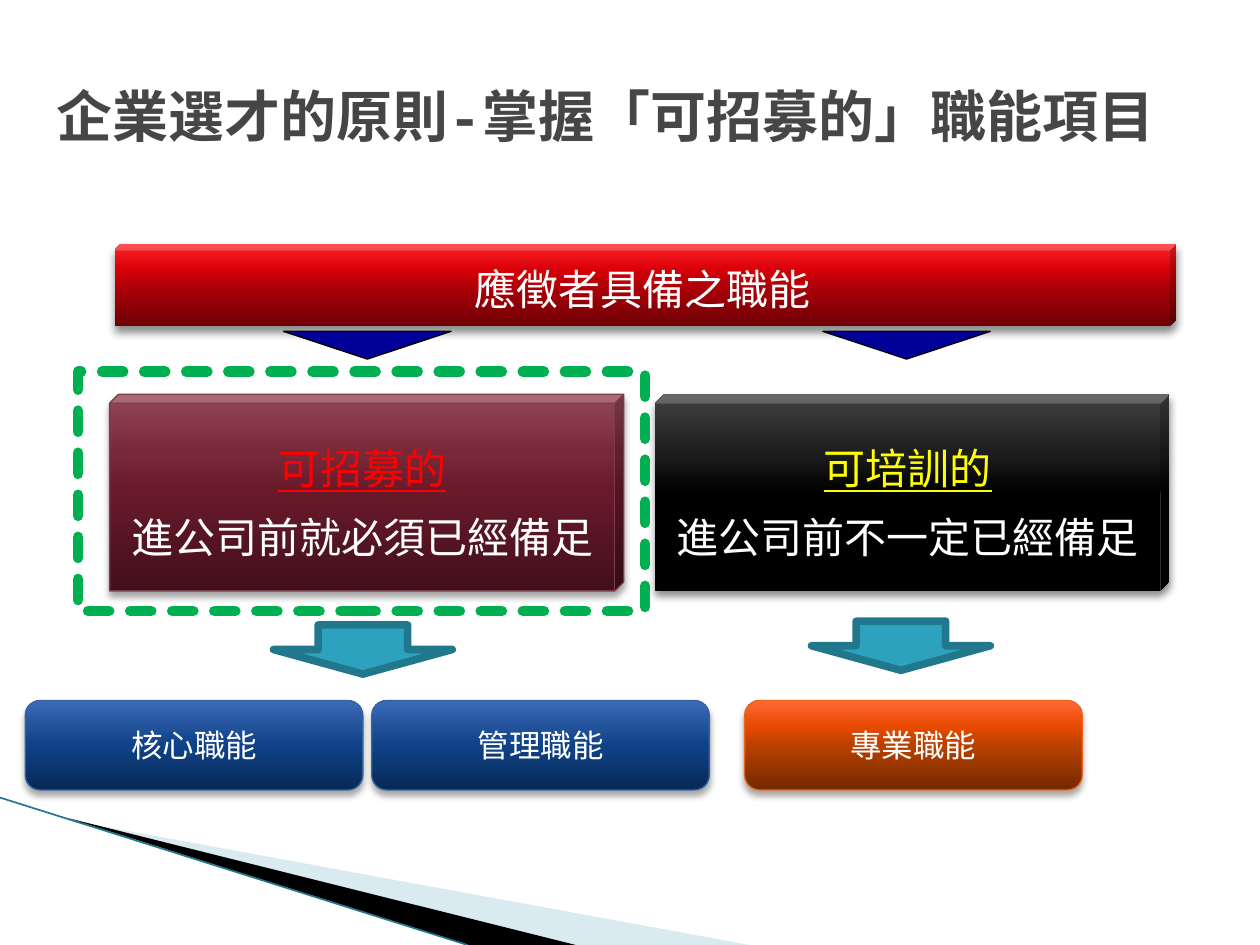
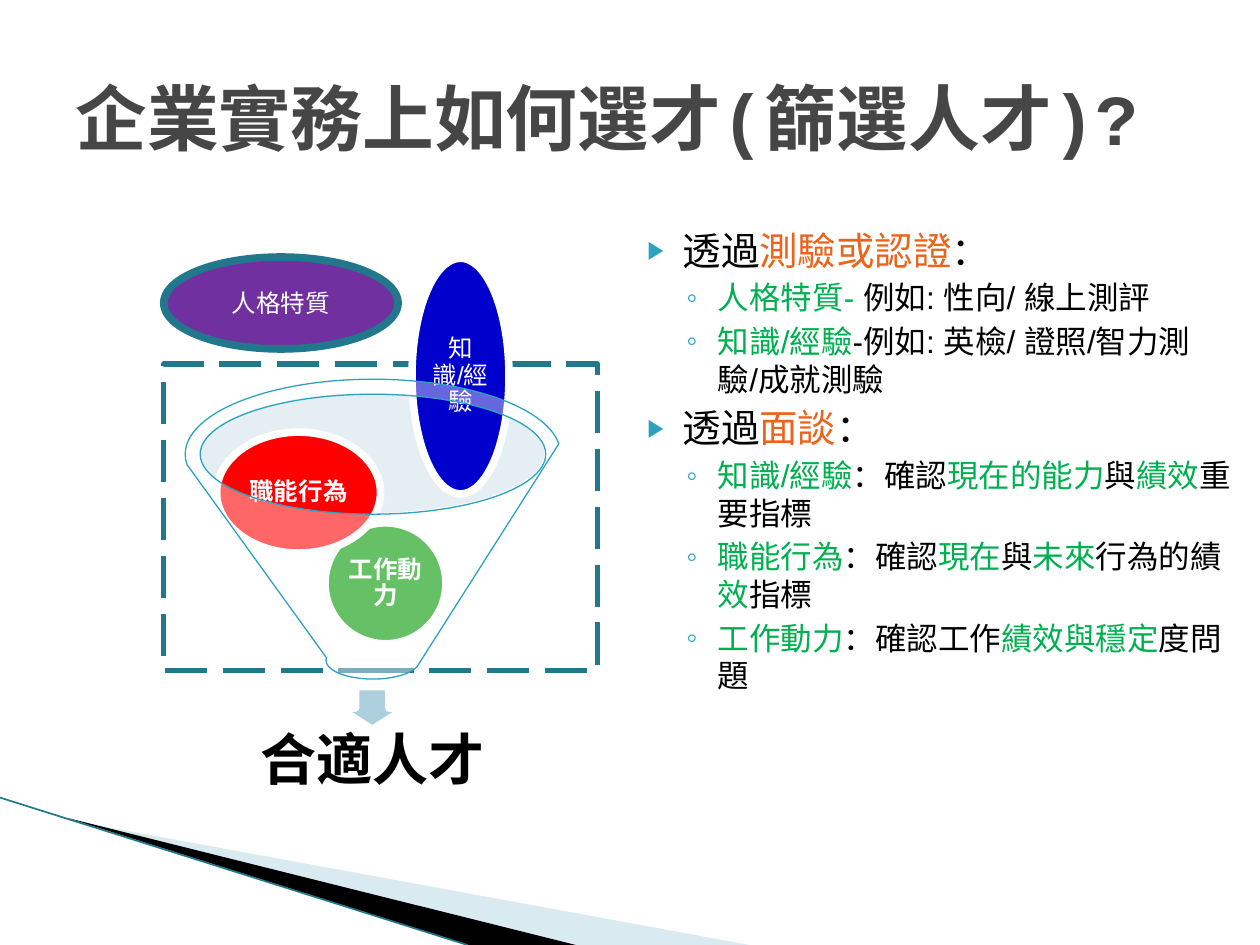
"""Build two slides on choosing talent by recruitable competencies."""
from lxml.etree import SubElement
from pptx import Presentation
from pptx.dml.color import RGBColor
from pptx.enum.dml import MSO_LINE
from pptx.enum.shapes import MSO_CONNECTOR, MSO_SHAPE
from pptx.enum.text import MSO_ANCHOR, PP_ALIGN
from pptx.oxml.ns import qn
from pptx.util import Pt

SCALE = 9144
WHITE = RGBColor(0xFF, 0xFF, 0xFF)
BLACK = RGBColor(0x00, 0x00, 0x00)
TITLE_GREY = RGBColor(0x46, 0x46, 0x46)
TEAL = RGBColor(0x2D, 0xA2, 0xBF)
DARK_TEAL = RGBColor(0x21, 0x78, 0x8D)
PALE_TEAL = RGBColor(0xA0, 0xCB, 0xDC)
ARROW_TEAL = RGBColor(0xAD, 0xCE, 0xDC)
MOUTH_TEAL = RGBColor(0xBE, 0xD7, 0xE2)
NAVY = RGBColor(0x00, 0x00, 0x99)
BLUE = RGBColor(0x00, 0x00, 0xCC)
RED = RGBColor(0xFF, 0x00, 0x00)
YELLOW = RGBColor(0xFF, 0xFF, 0x00)
GREEN = RGBColor(0x00, 0xB0, 0x50)
DARK_GREEN = RGBColor(0x00, 0x99, 0x00)
PURPLE = RGBColor(0x70, 0x30, 0xA0)
ORANGE = RGBColor(0xEB, 0x64, 0x1B)
WINE_EDGE = RGBColor(0x7D, 0x3C, 0x4A)
BLUE_EDGE = RGBColor(0x39, 0x63, 0x9D)

STOPS = (0, 50, 70, 100)
RED_GRADIENT = ("6D0005", "B00008", "DA0008", "FF2429")
WINE_GRADIENT = ("420F1A", "681A2B", "772939", "944755")
BLACK_GRADIENT = ("000000", "000000", "1D1D1D", "424242")
BLUE_GRADIENT = ("072956", "104288", "205199", "3D6BB9")
ORANGE_GRADIENT = ("732800", "B94100", "E64900", "FF6933")

SANS = "Noto Sans CJK SC"
LATIN = "Arial"
TITLE_FONT = "Courier New"


def px(length):
    """Turn a length in px into EMU."""
    return round(length * SCALE)


def apply(target, values):
    """Set each attribute named in a dict of format values."""
    for name, value in values.items():
        setattr(target, name, value)


class Deck:
    """Hold the style and the current slide, and draw each kind of element."""

    def __init__(self):
        """Start an empty presentation of 1000 by 750 px."""
        self.presentation = Presentation()
        apply(self.presentation, {"slide_width": px(1000), "slide_height": px(750)})
        self.slide = None

    def add_slide(self, title, box, size):
        """Start a slide with the corner sweep and its title."""
        self.slide = self.presentation.slides.add_slide(self.presentation.slide_layouts[6])
        self.sweep([(55, 651), (595, 750), (456, 750)], PALE_TEAL, 40)
        self.sweep([(53, 649), (457, 750), (372, 750)], BLACK)
        edge = self.slide.shapes.add_connector(
            MSO_CONNECTOR.STRAIGHT, px(0), px(633), px(371), px(750))
        edge.line.color.rgb = DARK_TEAL
        edge.line.width = Pt(0.95)
        SubElement(edge._element.spPr, qn("a:effectLst"))
        frame = self.text_box(box)
        self.paragraph(frame, [(title, TITLE_GREY)], size, TITLE_FONT, bold=True)

    def sweep(self, points, color, alpha=None):
        """Draw one filled outline of the corner sweep."""
        builder = self.slide.shapes.build_freeform(*points[0], scale=SCALE)
        builder.add_line_segments(points[1:])
        self.paint(builder.convert_to_shape(), color, alpha)

    def paint(self, shape, fill=None, alpha=None, line=None, width=0.75):
        """Give a shape its fill and line, without a shadow."""
        shape.shadow.inherit = False
        if fill is None:
            shape.fill.background()
        elif isinstance(fill, RGBColor):
            shape.fill.solid()
            shape.fill.fore_color.rgb = fill
            if alpha:
                color = shape._element.spPr.find(qn("a:solidFill"))[0]
                SubElement(color, qn("a:alpha"), val=str(alpha * 1000))
        else:
            self.gradient(shape, fill)
        if line is None:
            shape.line.fill.background()
        else:
            shape.line.color.rgb = line
            shape.line.width = Pt(width)

    def gradient(self, shape, colors):
        """Fill a shape with an upward gradient of four stops."""
        shape.fill.gradient()
        shape.fill.gradient_angle = 90
        stops = shape._element.spPr.find(qn("a:gradFill")).find(qn("a:gsLst"))
        for stop in list(stops):
            stops.remove(stop)
        for position, color in zip(STOPS, colors):
            stop = SubElement(stops, qn("a:gs"), pos=str(position * 1000))
            SubElement(stop, qn("a:srgbClr"), val=color)

    def shape(self, kind, box, adjust=None, **paint):
        """Add a painted preset shape."""
        shape = self.slide.shapes.add_shape(kind, *map(px, box))
        if adjust is not None:
            shape.adjustments[0] = adjust
        self.paint(shape, **paint)
        return shape

    def raised(self, kind, box, adjust, fill, line=None, opacity=35, blur=4):
        """Add a gradient shape that casts a shadow downward."""
        shape = self.shape(kind, box, adjust, fill=fill, line=line)
        effects = shape._element.spPr.find(qn("a:effectLst"))
        shadow = SubElement(effects, qn("a:outerShdw"), blurRad=str(Pt(blur)),
                            dist=str(Pt(3)), dir="5400000", rotWithShape="0")
        color = SubElement(shadow, qn("a:srgbClr"), val="000000")
        SubElement(color, qn("a:alpha"), val=str(opacity * 1000))
        return shape

    def frame(self, shape, wrap=True, inset=None, anchor=MSO_ANCHOR.MIDDLE):
        """Prepare the text frame of a shape."""
        frame = shape.text_frame
        apply(frame, {"word_wrap": wrap, "vertical_anchor": anchor})
        if inset is not None:
            sides = ("left", "top", "right", "bottom")
            apply(frame, {f"margin_{side}": px(inset) for side in sides})
        return frame

    def text_box(self, box, **options):
        """Add a text box and return its frame."""
        return self.frame(self.slide.shapes.add_textbox(*map(px, box)), **options)

    def paragraph(self, frame, runs, size, font, bold=False, underline=False, bullet=None, **layout):
        """Write runs of (text, color) into the next paragraph of a frame."""
        first = not frame.paragraphs[0].runs
        paragraph = frame.paragraphs[0] if first else frame.add_paragraph()
        if bullet:
            self.bullet(paragraph, *bullet)
        if first:
            layout.pop("space_before", None)
        apply(paragraph, layout)
        for text, color in runs:
            run = paragraph.add_run()
            run.text = text
            run.font.color.rgb = color
            apply(run.font, {"size": Pt(size), "name": font, "bold": bold, "underline": underline})
            SubElement(run._r.get_or_add_rPr(), qn("a:ea"), typeface=SANS)

    def bullet(self, paragraph, mark, percent, left, hang):
        """Give a paragraph a teal bullet and a hanging indent."""
        properties = paragraph._p.get_or_add_pPr()
        properties.set("marL", str(px(left)))
        properties.set("indent", str(px(-hang)))
        color = SubElement(properties, qn("a:buClr"))
        SubElement(color, qn("a:srgbClr"), val=str(TEAL))
        SubElement(properties, qn("a:buSzPct"), val=str(percent * 1000))
        SubElement(properties, qn("a:buFont"), typeface=LATIN)
        SubElement(properties, qn("a:buChar"), char=mark)

    def label(self, shape, text, size, font=SANS, wrap=True, inset=None, **layout):
        """Centre one white line of text in a shape."""
        frame = self.frame(shape, wrap, inset)
        self.paragraph(frame, [(text, WHITE)], size, font, alignment=PP_ALIGN.CENTER, **layout)


def build_principle(deck):
    """Draw the slide on recruitable and trainable competencies."""
    deck.add_slide("企業選才的原則-掌握「可招募的」職能項目", (35, 44, 937, 94), 32)
    banner = deck.raised(MSO_SHAPE.CUBE, (91, 194, 842, 65), 0.07, RED_GRADIENT, None, 45, 5)
    deck.label(banner, "應徵者具備之職能", 24, wrap=False)

    competencies = (
        (87, WINE_GRADIENT, WINE_EDGE, 35, 4, "可招募的", RED, "進公司前就必須已經備足"),
        (520, BLACK_GRADIENT, None, 45, 5, "可培訓的", YELLOW, "進公司前不一定已經備足"),
    )
    layout = {"alignment": PP_ALIGN.CENTER, "line_spacing": 1.2, "space_before": Pt(5)}
    for left, fill, edge, opacity, blur, name, color, condition in competencies:
        cube = deck.raised(MSO_SHAPE.CUBE, (left, 313, 408, 156), 0.045, fill, edge, opacity, blur)
        frame = deck.frame(cube, wrap=False)
        deck.paragraph(frame, [(name, color)], 24, SANS, underline=True, **layout)
        deck.paragraph(frame, [(condition, WHITE)], 24, SANS, **layout)

    for left in (225, 653):
        pointer = deck.shape(MSO_SHAPE.ISOSCELES_TRIANGLE, (left, 263, 133, 22),
                             fill=NAVY, line=BLACK)
        pointer.rotation = 180

    focus = deck.shape(MSO_SHAPE.RECTANGLE, (62, 295, 450, 190), line=GREEN, width=6)
    focus.line.dash_style = MSO_LINE.SQUARE_DOT
    focus.line._get_or_add_ln().set("cap", "rnd")

    for left, top in ((217, 496), (644, 493)):
        deck.shape(MSO_SHAPE.DOWN_ARROW, (left, top, 142, 39),
                   fill=TEAL, line=DARK_TEAL, width=4.33)

    kinds = (
        (20, "核心職能", BLUE_GRADIENT, BLUE_EDGE),
        (295, "管理職能", BLUE_GRADIENT, BLUE_EDGE),
        (591, "專業職能", ORANGE_GRADIENT, ORANGE),
    )
    for left, name, fill, edge in kinds:
        card = deck.raised(MSO_SHAPE.ROUNDED_RECTANGLE, (left, 556, 268, 71), None, fill, edge)
        deck.label(card, name, 18)


def build_practice(deck):
    """Draw the slide with the talent funnel and the selection methods."""
    deck.add_slide("企業實務上如何選才(篩選人才)?", (50, 30, 900, 125), 41)
    scope = deck.shape(MSO_SHAPE.RECTANGLE, (130, 289, 344, 243), line=DARK_TEAL, width=3)
    scope.line.dash_style = MSO_LINE.LONG_DASH
    deck.shape(MSO_SHAPE.OVAL, (158, 312, 274, 95), fill=MOUTH_TEAL, alpha=40)
    deck.shape(MSO_SHAPE.DOWN_ARROW, (269, 545, 53, 34), fill=ARROW_TEAL, line=WHITE, width=4.33)
    result = deck.text_box((168, 573, 255, 64), inset=25)
    deck.paragraph(result, [("合適人才", BLACK)], 32, LATIN, bold=True,
                   alignment=PP_ALIGN.CENTER, line_spacing=0.9)

    ingredients = (
        ((258, 415, 96, 96), DARK_GREEN, "工作動力", True),
        ((172, 343, 130, 96), RED, "職能行為", True),
        ((327, 205, 77, 187), BLUE, "知識/經驗", False),
    )
    for box, color, name, bold in ingredients:
        ball = deck.shape(MSO_SHAPE.OVAL, box, fill=color, line=WHITE, width=4.33)
        deck.label(ball, name, 14, LATIN, inset=2, bold=bold, line_spacing=0.9)
    deck.shape(MSO_SHAPE.FUNNEL, (147, 301, 298, 238), fill=WHITE, alpha=40, line=TEAL)

    methods = (
        (0, [("透過", BLACK), ("測驗或認證", ORANGE), ("：", BLACK)]),
        (1, [("人格特質- ", GREEN), ("例如: 性向/ 線上測評", BLACK)]),
        (1, [("知識/經驗", GREEN), ("-例如: 英檢/ 證照/智力測驗/成就測驗", BLACK)]),
        (0, [("透過", BLACK), ("面談", ORANGE), ("：", BLACK)]),
        (1, [("知識/經驗", GREEN), ("：確認", BLACK), ("現在的能力", GREEN),
             ("與", BLACK), ("績效", GREEN), ("重要指標", BLACK)]),
        (1, [("職能行為", GREEN), ("：確認", BLACK), ("現在", GREEN), ("與", BLACK),
             ("未來", GREEN), ("行為的績", BLACK), ("效", GREEN), ("指標", BLACK)]),
        (1, [("工作動力", GREEN), ("：確認工作", BLACK), ("績效與穩定", GREEN), ("度問題", BLACK)]),
    )
    levels = (
        {"size": 22, "bullet": ("▶", 65, 40, 28), "space_before": Pt(4)},
        {"size": 18, "bullet": ("◦", 100, 68, 25), "space_before": Pt(3.2)},
    )
    frame = deck.text_box((492, 175, 504, 531), anchor=MSO_ANCHOR.TOP)
    for level, runs in methods:
        deck.paragraph(frame, runs, font=LATIN, level=level, **levels[level])

    trait = deck.shape(MSO_SHAPE.OVAL, (130, 204, 186, 73), fill=PURPLE, line=DARK_TEAL, width=4.33)
    deck.label(trait, "人格特質", 14)


def main():
    """Build both slides and save them."""
    deck = Deck()
    build_principle(deck)
    build_practice(deck)
    deck.presentation.save("out.pptx")


if __name__ == "__main__":
    main()
